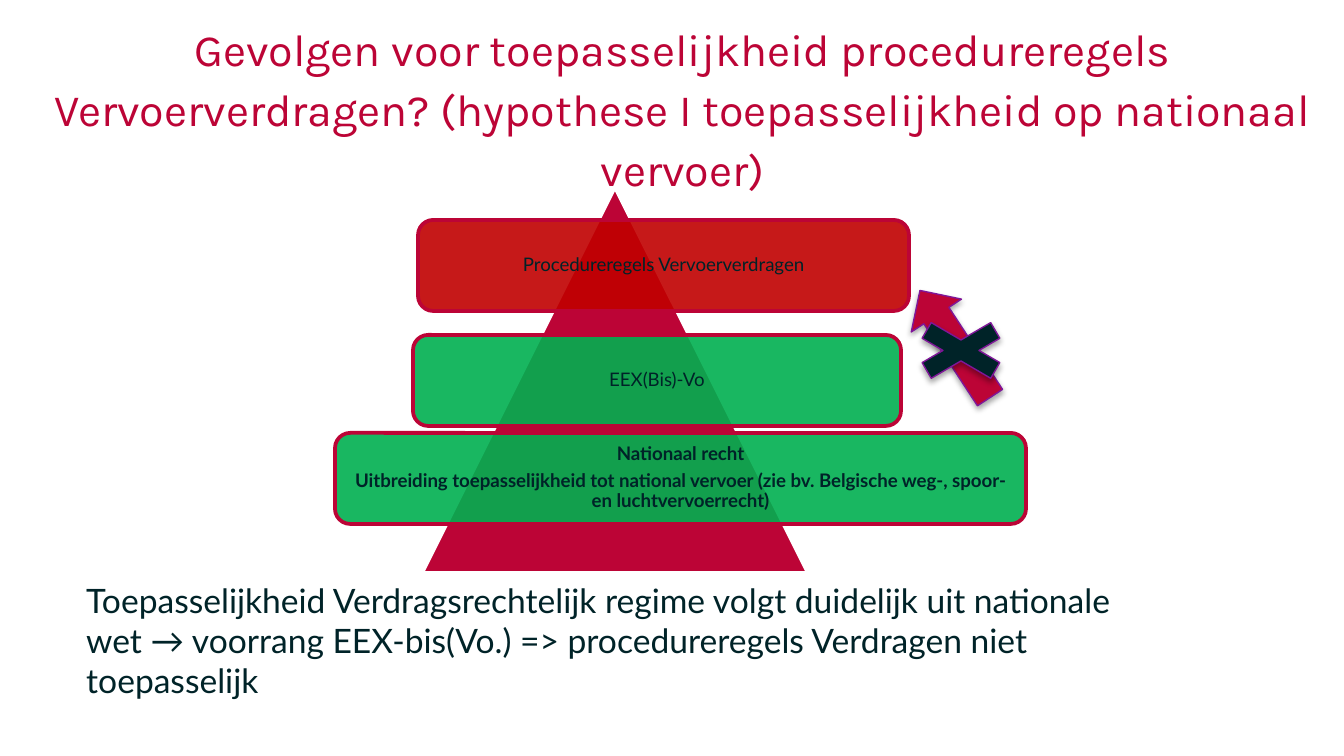
import pptx
import pptx.util
import pptx.dml.color
import pptx.enum.shapes
import pptx.enum.text
import lxml.etree

PX = 914400 / 134.4
Pt = pptx.util.Pt
KIND = pptx.enum.shapes.MSO_SHAPE
ALIGN = pptx.enum.text.PP_ALIGN
ANCHOR = pptx.enum.text.MSO_ANCHOR
NS = "http://schemas.openxmlformats.org/drawingml/2006/main"
RED, DARK, GREEN, PURPLE = "BC0436", "002328", "00B050", "7F1699"


def color(fmt, code, alpha=None):
    """Make a fill solid in a hex colour, with an optional opacity in percent."""
    fmt.solid()
    fmt.fore_color.rgb = pptx.dml.color.RGBColor.from_string(code)
    if alpha:
        node = fmt._xPr.find(f".//{{{NS}}}srgbClr")
        lxml.etree.SubElement(node, f"{{{NS}}}alpha", val=str(alpha * 1000))


def write(frame, lines, font, code, form):
    """Fill a text frame; form holds the paragraph format values."""
    frame.word_wrap = True
    for i, line in enumerate(lines):
        para = frame.paragraphs[0] if i == 0 else frame.add_paragraph()
        para.text = line
        for key, val in form.items():
            setattr(para, key, val)
        for key, val in font.items():
            setattr(para.font, key, val)
        color(para.font.fill, code)


deck = pptx.Presentation()
deck.slide_width = round(1344 * PX)
deck.slide_height = round(756 * PX)
slide = deck.slides.add_slide(deck.slide_layouts[6])
shapes = slide.shapes

# Title
title = shapes.add_textbox(*[round(n * PX) for n in (36, 16, 1293, 85)])
for side in ("left", "top", "right", "bottom"):
    setattr(title.text_frame, f"margin_{side}", 0)
write(title.text_frame,
      ["Gevolgen voor toepasselijkheid procedureregels Vervoerverdragen? "
       "(hypothese I toepasselijkheid op nationaal vervoer)"],
      {"name": "Karla", "size": Pt(24)}, RED,
      {"alignment": ALIGN.CENTER, "line_spacing": Pt(32)})

# Pyramid with its three levels
peak = shapes.add_shape(KIND.ISOSCELES_TRIANGLE,
                        *[round(n * PX) for n in (422, 187, 386, 386)])
peak.shadow.inherit = False
color(peak.fill, RED)
color(peak.line.fill, "FFFFFF")
peak.line.width = Pt(2)

levels = [
    (418, 220, 491, "C00000", False, ["Procedureregels Vervoerverdragen"]),
    (413, 335, 488, GREEN, False, ["EEX(Bis)-Vo"]),
    (335, 433, 691, GREEN, True,
     ["Nationaal recht",
      "Uitbreiding toepasselijkheid tot national vervoer "
      "(zie bv. Belgische weg-, spoor- en luchtvervoerrecht)"]),
]
for left, top, width, code, bold, lines in levels:
    level = shapes.add_shape(KIND.ROUNDED_RECTANGLE,
                             *[round(n * PX) for n in (left, top, width, 91)])
    level.shadow.inherit = False
    color(level.fill, code, 90)
    color(level.line.fill, RED)
    level.line.width = Pt(2)
    for side in ("left", "top", "right", "bottom"):
        setattr(level.text_frame, f"margin_{side}", round(5 * PX))
    level.text_frame.vertical_anchor = ANCHOR.MIDDLE
    write(level.text_frame, lines,
          {"name": "Lato", "size": Pt(10), "bold": bold}, DARK,
          {"alignment": ALIGN.CENTER, "line_spacing": 0.9,
           "space_after": Pt(3.5)})

# Conclusion
body = shapes.add_textbox(*[round(n * PX) for n in (73, 573, 1071, 136)])
write(body.text_frame,
      ["Toepasselijkheid Verdragsrechtelijk regime volgt duidelijk uit "
       "nationale wet → voorrang EEX-bis(Vo.) => procedureregels "
       "Verdragen niet toepasselijk"],
      {"name": "Lato", "size": Pt(18)}, DARK, {"alignment": ALIGN.LEFT})

# Crossed-out arrow
marks = [
    (KIND.UP_ARROW, (925, 280, 60, 128), 326.8, RED),
    (KIND.MATH_MULTIPLY, (895, 312, 132, 77), 0, DARK),
]
for kind, box, turn, code in marks:
    mark = shapes.add_shape(kind, *[round(n * PX) for n in box])
    mark.rotation = turn
    color(mark.fill, code)
    color(mark.line.fill, PURPLE)
    mark.line.width = Pt(0.75)
    mark.shadow.inherit = False
    glow = lxml.etree.SubElement(
        mark._element.spPr.find(f"{{{NS}}}effectLst"), f"{{{NS}}}outerShdw",
        blurRad=str(Pt(3.1)), dist=str(Pt(1.8)), dir="5400000", rotWithShape="0")
    tint = lxml.etree.SubElement(glow, f"{{{NS}}}srgbClr", val="000000")
    lxml.etree.SubElement(tint, f"{{{NS}}}alpha", val="35000")

deck.save("out.pptx")
